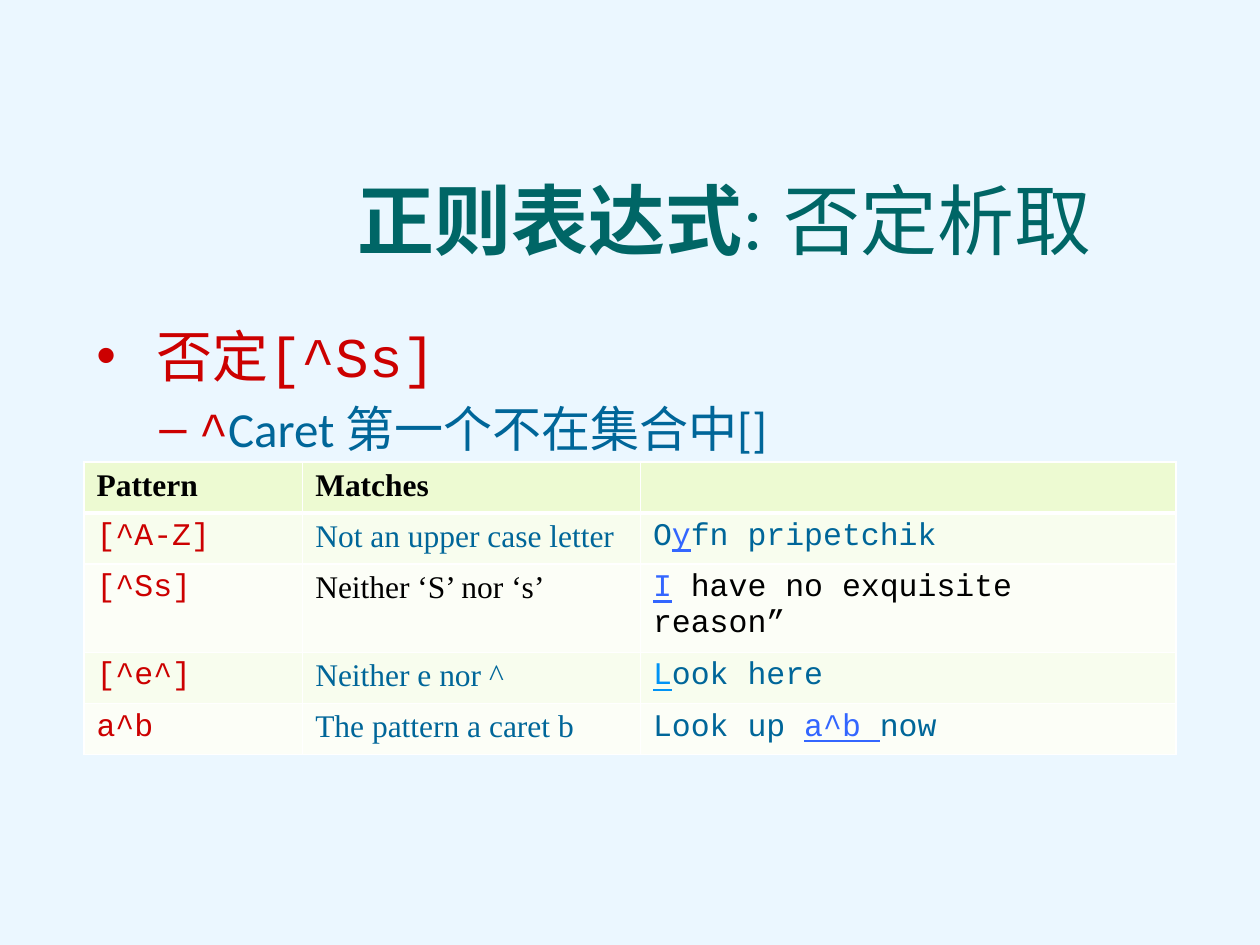
from lxml import etree
from pptx import Presentation
from pptx.dml.color import RGBColor
from pptx.enum.text import MSO_ANCHOR, MSO_AUTO_SIZE, PP_ALIGN
from pptx.oxml.ns import qn
from pptx.util import Pt

CENTER = PP_ALIGN.CENTER
BOTTOM = MSO_ANCHOR.BOTTOM
NO_AUTOFIT = MSO_AUTO_SIZE.NONE

SERIF, MONO, SANS = "Times New Roman", "Courier New", "Calibri"
RED, BLUE, LINK, BLACK = "CC0000", "006699", "3366FF", "000000"


def rgb(hex_color):
    return RGBColor.from_string(hex_color)


def add_text(paragraph, text, size=18, font=SERIF, color=BLUE, bold=False, underline=False):
    run = paragraph.add_run()
    run.text = text
    run.font.size = Pt(size)
    run.font.name = font
    run.font.color.rgb = rgb(color)
    run.font.bold = bold
    run.font.underline = underline


prs = Presentation()
prs.slide_width, prs.slide_height = Pt(720), Pt(540)
slide = prs.slides.add_slide(prs.slide_layouts[5])
slide.background.fill.solid()
slide.background.fill.fore_color.rgb = rgb("EBF7FF")

# Title
title = slide.shapes.title
title.left, title.top, title.width, title.height = Pt(108), Pt(97), Pt(612), Pt(58.5)
title.text_frame.auto_size = NO_AUTOFIT
title.text_frame.vertical_anchor = BOTTOM
heading = title.text_frame.paragraphs[0]
heading.alignment = CENTER
heading.line_spacing = 0.9
add_text(heading, "正则表达式", size=44, color="006666", bold=True)
add_text(heading, ": 否定析取", size=44, color="006666")

# Bullets: level, bullet, left margin, hanging indent, size, runs
bullets = [
    (0, "•", 27, 27, 32, [(" 否定[^Ss]", MONO, RED)]),
    (1, "–", 58.5, 22.5, 28, [("^", MONO, RED), ("Caret 第一个不在集合中[]", SANS, BLUE)]),
]
body = slide.shapes.add_textbox(Pt(48), Pt(180), Pt(600), Pt(324)).text_frame
body.word_wrap = True
for level, bullet, margin, hanging, size, runs in bullets:
    item = body.add_paragraph() if level else body.paragraphs[0]
    item.level = level
    item.space_before = Pt(0.2 * size)
    for text, font, color in runs:
        add_text(item, text, size=size, font=font, color=color)
    properties = item._p.get_or_add_pPr()
    properties.set("marL", str(Pt(margin)))
    properties.set("indent", str(-Pt(hanging)))
    etree.SubElement(properties, qn("a:buFont"), typeface="Arial")
    etree.SubElement(properties, qn("a:buChar"), char=bullet)

# Pattern table: each row is pattern, meaning, meaning colour, example runs
header = ["Pattern", "Matches", ""]
patterns = [
    ("[^A-Z]", "Not an upper case letter", BLUE,
     [("O", BLUE), ("y", LINK), ("fn pripetchik", BLUE)]),
    ("[^Ss]", "Neither ‘S’ nor ‘s’", BLACK,
     [("I", LINK), (" have no exquisite reason”", BLACK)]),
    ("[^e^]", "Neither e nor ^", BLUE,
     [("L", "0093F5"), ("ook here", BLUE)]),
    ("a^b", "The pattern a caret b", BLUE,
     [("Look up ", BLUE), ("a^b ", LINK), ("now", BLUE)]),
]
column_widths = [125, 193, 306]
row_height = 29.2
row_count = len(patterns) + 1
table = slide.shapes.add_table(row_count, len(column_widths), Pt(48), Pt(264),
                               Pt(sum(column_widths)), Pt(row_height * row_count)).table
for column, width in zip(table.columns, column_widths):
    column.width = Pt(width)
for row in table.rows:
    row.height = Pt(row_height)

for index, label in enumerate(header):
    if label:
        add_text(table.cell(0, index).text_frame.paragraphs[0], label, color=BLACK, bold=True)

for index, (pattern, meaning, meaning_color, example) in enumerate(patterns, 1):
    cells = [table.cell(index, c).text_frame.paragraphs[0] for c in range(len(column_widths))]
    add_text(cells[0], pattern, font=MONO, color=RED)
    add_text(cells[1], meaning, color=meaning_color)
    for text, color in example:
        add_text(cells[2], text, font=MONO, color=color, underline=color not in (BLUE, BLACK))

# Cell fills and white borders, thicker under the header
for index in range(row_count):
    fill_color = "EDFAD2" if index == 0 else ("FCFEF7", "F8FDEE")[index % 2]
    edges = {"lnL": 1, "lnR": 1, "lnT": 3 if index == 1 else 1, "lnB": 3 if index == 0 else 1}
    for cell in table.rows[index].cells:
        cell_properties = cell._tc.get_or_add_tcPr()
        for edge, weight in edges.items():
            border = etree.SubElement(cell_properties, qn(f"a:{edge}"), w=str(Pt(weight)))
            border_fill = etree.SubElement(border, qn("a:solidFill"))
            etree.SubElement(border_fill, qn("a:srgbClr"), val="FFFFFF")
        cell.fill.solid()
        cell.fill.fore_color.rgb = rgb(fill_color)

# The empty header cell keeps the text size of the table
table.cell(0, 2).text_frame.paragraphs[0].font.size = Pt(18)

prs.save("out.pptx")
